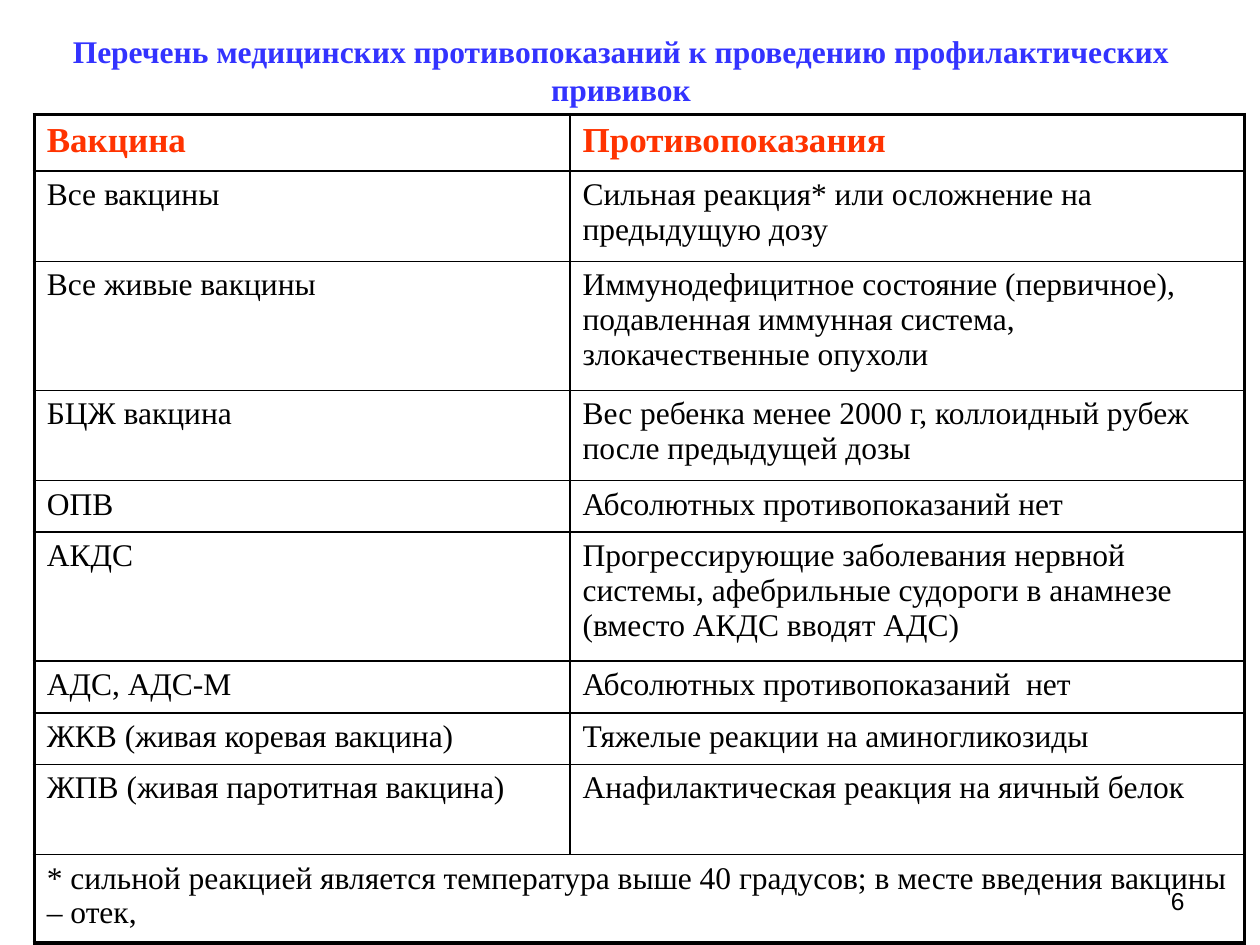
from lxml.etree import SubElement
from pptx import Presentation
from pptx.dml.color import RGBColor
from pptx.enum.text import MSO_ANCHOR, PP_ALIGN
from pptx.oxml.ns import qn
from pptx.util import Cm, Pt

# Content
TITLE = "Перечень медицинских противопоказаний к проведению профилактических прививок"
HEAD = ("Вакцина", "Противопоказания")
ROWS = [
    ("Все вакцины", "Сильная реакция* или осложнение на предыдущую дозу"),
    ("Все живые вакцины", "Иммунодефицитное состояние (первичное), "
     "подавленная иммунная система, злокачественные опухоли"),
    ("БЦЖ вакцина", "Вес ребенка менее 2000 г, коллоидный рубеж после предыдущей дозы"),
    ("ОПВ", "Абсолютных противопоказаний нет"),
    ("АКДС", "Прогрессирующие заболевания нервной системы, "
     "афебрильные судороги в анамнезе (вместо АКДС вводят АДС)"),
    ("АДС, АДС-М", "Абсолютных противопоказаний  нет"),
    ("ЖКВ (живая коревая вакцина)", "Тяжелые реакции на аминогликозиды"),
    ("ЖПВ (живая паротитная вакцина)", "Анафилактическая реакция на яичный белок"),
]
NOTE = ("* сильной реакцией является температура выше 40 градусов; "
        "в месте введения вакцины – отек,")
PAGE = "6"

# Sizes in cm
WIDTHS = (10.8, 13.6)
ONE, TWO, THREE = 1.04, 1.82, 2.6
HEIGHTS = (1.14, TWO, THREE, TWO, ONE, THREE, ONE, ONE, TWO, 1.78)
SERIF, SANS = "Times New Roman", "Arial"
BLACK, BLUE, RED = "000000", "3333FF", "FF3300"
THIN, THICK = 1, 2.25


def color(code):
    return RGBColor.from_string(code)


def write(frame, text, size, tint=BLACK, bold=False, font=SERIF, align=PP_ALIGN.LEFT):
    frame.word_wrap = True
    par = frame.paragraphs[0]
    par.alignment = align
    run = par.add_run()
    run.text = text
    run.font.name = font
    run.font.size = Pt(size)
    run.font.bold = bold
    run.font.color.rgb = color(tint)
    return par


def label(slide, box, *args, **opts):
    frame = slide.shapes.add_textbox(*map(Cm, box)).text_frame
    frame.vertical_anchor = MSO_ANCHOR.MIDDLE
    write(frame, *args, **opts)


def border(cell, sides):
    props = cell._tc.get_or_add_tcPr()
    for at, (side, width) in enumerate(sides.items()):
        line = SubElement(props, qn(f"a:ln{side}"), w=str(Pt(width)))
        fill = SubElement(line, qn("a:solidFill"))
        SubElement(fill, qn("a:srgbClr"), val=BLACK)
        props.insert(at, line)  # borders come before the fill


deck = Presentation()
deck.slide_width, deck.slide_height = Cm(25.4), Cm(19.05)
slide = deck.slides.add_slide(deck.slide_layouts[6])

# Page number and title
label(slide, (18.21, 17.65, 5.92, 1.02), PAGE, 14, font=SANS, align=PP_ALIGN.RIGHT)
label(slide, (1.09, 0.53, 22.86, 1.75), TITLE, 18, BLUE, True, align=PP_ALIGN.CENTER)

# Table grid
cells = [HEAD, *ROWS, (NOTE, "")]
last = len(cells) - 1
table = slide.shapes.add_table(
    len(cells), 2, Cm(0.69), Cm(2.31), Cm(sum(WIDTHS)), Cm(sum(HEIGHTS))).table
table.first_row = table.horz_banding = False
for col, width in zip(table.columns, WIDTHS):
    col.width = Cm(width)
for row, height in zip(table.rows, HEIGHTS):
    row.height = Cm(height)
table.cell(last, 0).merge(table.cell(last, 1))

# Cell text, with a thick frame around thin inner lines
for r, pair in enumerate(cells):
    size, tint = (20, RED) if r == 0 else (18, BLACK)
    for c, text in enumerate(pair):
        cell = table.cell(r, c)
        cell.fill.background()
        border(cell, {
            "L": THICK if c == 0 else THIN,
            "R": THICK if c == 1 or r == last else THIN,
            "T": THICK if r == 0 else THIN,
            "B": THICK if r == last else THIN,
        })
        if text:
            par = write(cell.text_frame, text, size, tint, r == 0)
            par.space_before = Pt(size * 0.2)

deck.save("out.pptx")
